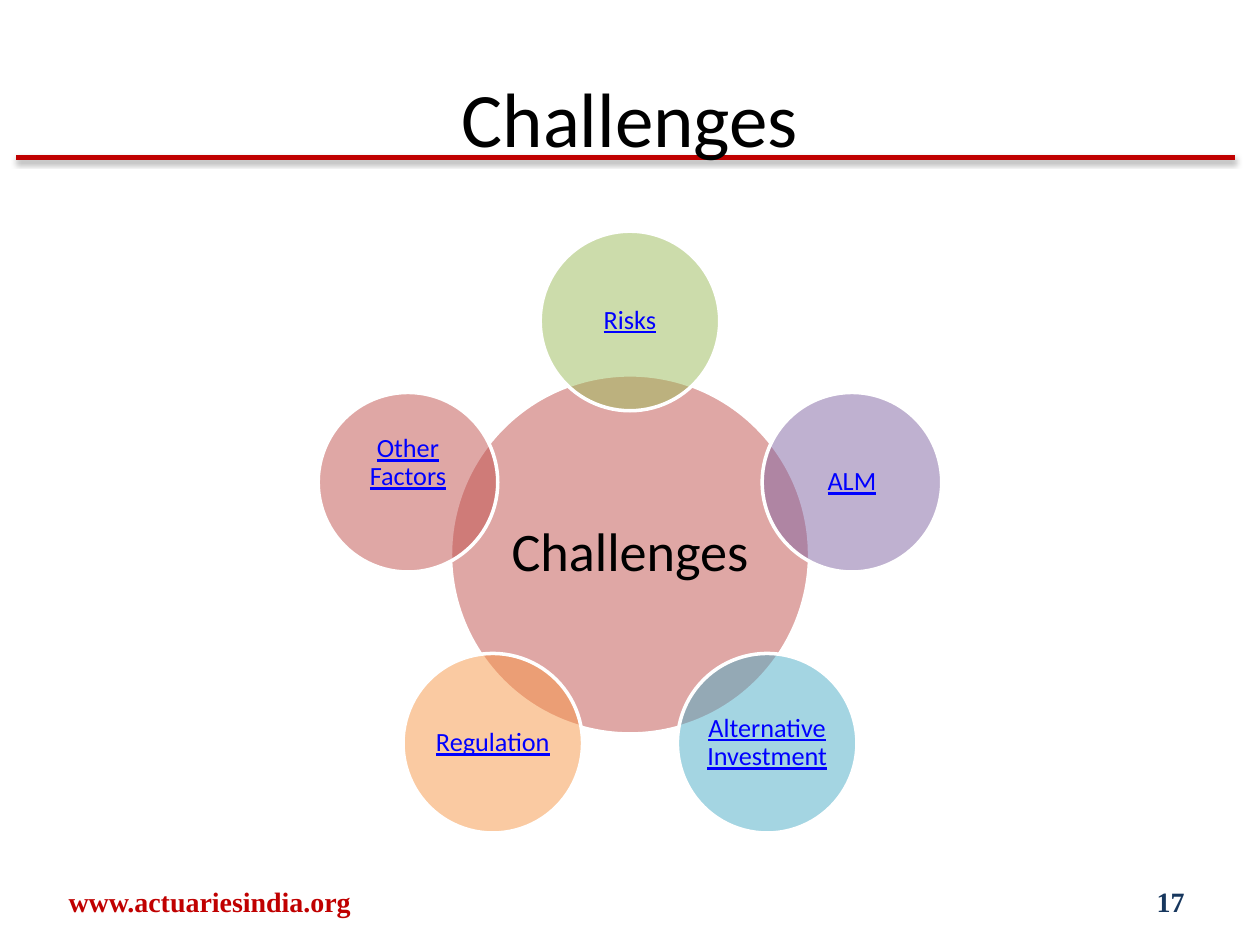
from math import cos, radians, sin

from lxml.etree import SubElement
from pptx import Presentation
from pptx.dml.color import RGBColor
from pptx.enum.shapes import MSO_CONNECTOR, MSO_SHAPE
from pptx.enum.text import MSO_ANCHOR, PP_ALIGN
from pptx.oxml.ns import qn
from pptx.util import Inches, Pt

SATELLITES = [
    ("Risks", "9BBB59", 0.02),
    ("ALM", "8064A2", 0.02),
    ("Alternative Investment", "4BACC6", 0.02),
    ("Regulation", "F79646", 0.02),
    ("Other Factors", "C0504D", 0.32),
]


def colour(hex_string):
    """Return the colour for a hex string."""
    return RGBColor.from_string(hex_string)


def write(shape, text, size, ink, font="Calibri", align=PP_ALIGN.CENTER,
          bold=False, underline=False, spacing=1.0, insets=(0.1, 0.05, 0.1, 0.05)):
    """Write one formatted paragraph, with insets left, top, right, bottom."""
    frame = shape.text_frame
    frame.word_wrap = True
    frame.vertical_anchor = MSO_ANCHOR.MIDDLE
    (frame.margin_left, frame.margin_top,
     frame.margin_right, frame.margin_bottom) = map(Inches, insets)
    paragraph = frame.paragraphs[0]
    paragraph.alignment = align
    paragraph.line_spacing = spacing
    run = paragraph.add_run()
    run.text = text
    run.font.name = font
    run.font.size = Pt(size)
    run.font.bold = bold
    run.font.underline = underline
    run.font.color.rgb = colour(ink)


def add_header(slide, left, top, width, height):
    """Place the title in its box, in front of a shadowed red rule."""
    rule = slide.shapes.add_connector(
        MSO_CONNECTOR.STRAIGHT, Inches(0.13), Inches(1.25), Inches(9.8), Inches(1.25))
    rule.line.color.rgb = colour("C00000")
    rule.line.width = Pt(3)
    effects = SubElement(rule._element.spPr, qn("a:effectLst"))
    shadow = SubElement(effects, qn("a:outerShdw"), blurRad=str(Pt(3.1)),
                        dist=str(Pt(1.6)), dir="5400000", rotWithShape="0")
    black = SubElement(shadow, qn("a:srgbClr"), val="000000")
    SubElement(black, qn("a:alpha"), val="38000")

    title = slide.shapes.title
    title.left, title.top, title.width, title.height = map(
        Inches, (left, top, width, height))
    write(title, "Challenges", 44, "000000")
    rule._element.addnext(title._element)


def add_circle(slide, centre_x, centre_y, diameter, fill):
    """Add a half-transparent circle with a white outline."""
    circle = slide.shapes.add_shape(
        MSO_SHAPE.OVAL, Inches(centre_x - diameter / 2),
        Inches(centre_y - diameter / 2), Inches(diameter), Inches(diameter))
    circle.shadow.inherit = False
    circle.fill.solid()
    circle.fill.fore_color.rgb = colour(fill)
    fill_colour = circle._element.spPr.find(qn("a:solidFill")).find(qn("a:srgbClr"))
    SubElement(fill_colour, qn("a:alpha"), val="50000")
    circle.line.color.rgb = colour("FFFFFF")
    circle.line.width = Pt(2)
    return circle


def add_radial_diagram(slide, centre_x, centre_y, hub_size):
    """Ring the hub circle with satellites half its size, clockwise from the top."""
    hub = add_circle(slide, centre_x, centre_y, hub_size, "C0504D")
    write(hub, "Challenges", 31, "000000", spacing=0.9, insets=(0.04,) * 4)
    orbit = 0.65 * hub_size
    for index, (label, fill, bottom) in enumerate(SATELLITES):
        angle = radians(360 / len(SATELLITES) * index)
        satellite = add_circle(slide, centre_x + orbit * sin(angle),
                               centre_y - orbit * cos(angle), hub_size / 2, fill)
        write(satellite, label, 15, "0000FF", underline=True, spacing=0.9,
              insets=(0, 0.02, 0, bottom))


def add_footer(slide, top, height):
    """Place the web address and the slide number along the bottom."""
    for text, left, width, ink, align in (
            ("www.actuariesindia.org", 0.08, 3.17, "C00000", PP_ALIGN.CENTER),
            ("17", 7.17, 2.33, "17375E", PP_ALIGN.RIGHT)):
        box = slide.shapes.add_textbox(
            Inches(left), Inches(top), Inches(width), Inches(height))
        write(box, text, 16, ink, font="Times New Roman", align=align, bold=True)


def main():
    """Build and save the slide."""
    presentation = Presentation()
    presentation.slide_width = Inches(10)
    presentation.slide_height = Inches(7.5)
    slide = presentation.slides.add_slide(presentation.slide_layouts[5])
    add_header(slide, 0.5, 0.3, 9, 1.25)
    add_radial_diagram(slide, 5, 4.4, 2.85)
    add_footer(slide, 6.95, 0.4)
    presentation.save("out.pptx")


if __name__ == "__main__":
    main()
